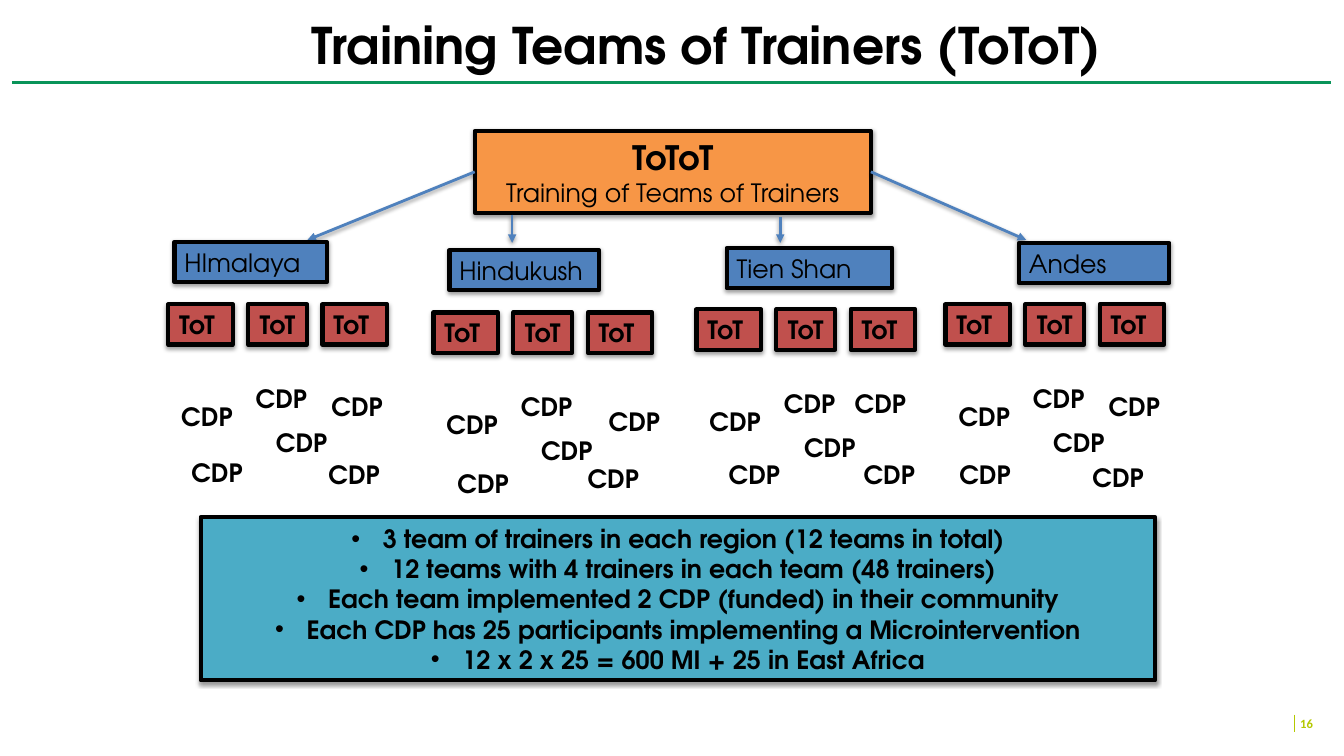
from lxml.etree import SubElement
from pptx import Presentation
from pptx.dml.color import RGBColor
from pptx.enum.shapes import MSO_CONNECTOR as CONN, MSO_SHAPE as SHAPE
from pptx.enum.text import MSO_ANCHOR as ANCHOR, MSO_AUTO_SIZE as FIT, PP_ALIGN as ALIGN
from pptx.oxml.ns import qn
from pptx.util import Pt


def rgb(value):
    return RGBColor.from_string(value)


class Deck:
    """Hold the style and the current slide, and draw its elements."""

    font, size, ink = "TeX Gyre Adventor", 18, "000000"
    orange, blue, red, teal = "F79646", "4F81BD", "C0504D", "4BACC6"
    green, lime = "099459", "B4C800"

    def __init__(self, prs):
        self.s = prs.slides.add_slide(prs.slide_layouts[1])

    def place(self, sp, x, y, w, h):
        sp.left, sp.top, sp.width, sp.height = Pt(x), Pt(y), Pt(w), Pt(h)

    def add_text(self, sp, lines, align=ALIGN.LEFT, anchor=ANCHOR.MIDDLE, font=None, color=None):
        tf = sp.text_frame
        tf.word_wrap, tf.auto_size, tf.vertical_anchor = True, FIT.NONE, anchor
        for i, (text, size, bold) in enumerate(lines):
            p = tf.add_paragraph() if i else tf.paragraphs[0]
            p.alignment, p.space_before = align, Pt(0)
            r = p.add_run()
            r.text = text
            r.font.name, r.font.size, r.font.bold = font or self.font, Pt(size), bold
            r.font.color.rgb = rgb(color or self.ink)
        return tf

    def shade(self, effects):
        shadow = SubElement(effects, qn("a:outerShdw"), blurRad=str(Pt(3.1)),
                            dist=str(Pt(1.6)), dir="5400000", rotWithShape="0")
        color = SubElement(shadow, qn("a:srgbClr"), val=self.ink)
        SubElement(color, qn("a:alpha"), val="38000")

    def frame(self, sp, fill):
        sp.fill.solid()
        sp.fill.fore_color.rgb = rgb(fill)
        sp.line.color.rgb, sp.line.width = rgb(self.ink), Pt(3)
        sp.shadow.inherit = False
        self.shade(sp._element.spPr.find(qn("a:effectLst")))

    def title(self, text, *box):
        sp = self.s.shapes.title
        self.place(sp, *box)
        self.add_text(sp, [(text, 36, True)], ALIGN.CENTER, ANCHOR.TOP)

    def bullets(self, items, fill, *box):
        sp = self.s.placeholders[1]
        self.place(sp, *box)
        self.frame(sp, fill)
        tf = self.add_text(sp, [(item, self.size, True) for item in items], ALIGN.CENTER)
        for p in tf.paragraphs:
            pPr = p._p.get_or_add_pPr()
            pPr.set("marL", str(Pt(22.5)))
            pPr.set("indent", str(Pt(-22.5)))
            SubElement(pPr, qn("a:buFont"), typeface="Arial")
            SubElement(pPr, qn("a:buChar"), char="•")

    def box(self, lines, fill, x, y, w, h=28.8, align=ALIGN.CENTER):
        sp = self.s.shapes.add_shape(SHAPE.RECTANGLE, Pt(x), Pt(y), Pt(w), Pt(h))
        self.frame(sp, fill)
        self.add_text(sp, lines, align)
        return sp

    def label(self, text, x, y, w=54.7, h=28.8, size=18, **style):
        sp = self.s.shapes.add_textbox(Pt(x), Pt(y), Pt(w), Pt(h))
        self.add_text(sp, [(text, size, True)], anchor=ANCHOR.TOP, **style)

    def line(self, x1, y1, x2, y2, color, width, arrow=False):
        cx = self.s.shapes.add_connector(CONN.STRAIGHT, Pt(x1), Pt(y1), Pt(x2), Pt(y2))
        cx.line.color.rgb, cx.line.width = rgb(color), Pt(width)
        effects = SubElement(cx._element.spPr, qn("a:effectLst"))
        if arrow:
            ln = cx._element.spPr.find(qn("a:ln"))
            SubElement(ln, qn("a:tailEnd"), type="triangle")
            self.shade(effects)
        return cx


REGIONS = [
    ("HImalaya", (124.6, 172.8, 108.7), (120.2, 217.4),
     [(229.7, 275.8), (129.6, 323.3), (227.5, 324.7)]),
    ("Hindukush", (321.1, 178.6, 106.6), (309.6, 223.2),
     [(427.7, 286.6), (319.7, 331.2), (412.6, 327.6)]),
    ("Tien Shan", (519.1, 177.1, 118.1), (497.5, 221),
     [(603.4, 273.6), (513.4, 324.7), (609.8, 324.7)]),
    ("Andes", (727.9, 173.5, 107.3), (675.4, 217.4),
     [(784.8, 275.8), (678.2, 324.7), (773.3, 326.9)]),
]
TEAMS = [(0, 46), (57, 42), (110.2, 46)]
SHARED_CDPS = [(2.2, 65.5), (69.8, 84.2), (55.4, 52.6)]
FACTS = [
    "3 team of trainers in each region (12 teams in total)",
    "12 teams with 4 trainers in each team (48 trainers)",
    "Each team implemented 2 CDP (funded) in their community",
    "Each CDP has 25 participants implementing a Microintervention",
    "12 x 2 x 25 = 600 MI + 25 in East Africa",
]


def main():
    prs = Presentation()
    prs.slide_width, prs.slide_height = Pt(960), Pt(540)
    d = Deck(prs)
    d.label("16", 921.6, 507.6, 51.8, 28.8, 9, font="Calibri", color=d.lime)
    d.line(924.5, 510.5, 924.5, 522.7, d.lime, 1)
    d.line(8.6, 59, 951.1, 59, d.green, 2.25)
    d.title("Training Teams of Trainers (ToToT)", 177.1, 6.5, 654.5, 79.9)
    d.bullets(FACTS, d.teal, 143.3, 369.4, 681.8, 116.6)
    root = d.box([("ToToT", 24, True), ("Training of Teams of Trainers", 18, False)],
                 d.orange, 339.1, 93.6, 283, 58.3)

    for side, start, end in [(1, (339.1, 122.75), (219.6, 171.4)),
                             (None, (365.8, 153.4), (365.8, 173.5)),
                             (None, (557.3, 154.8), (557.3, 173.5)),
                             (3, (622.1, 122.75), (733, 171.4))]:
        cx = d.line(*start, *end, d.blue, 2, arrow=True)
        if side is not None:
            cx.begin_connect(root, side)

    for name, spot, (x, y), own_cdps in REGIONS:
        d.box([(name, d.size, False)], d.blue, *spot, align=ALIGN.LEFT)
        for dx, w in TEAMS:
            d.box([("ToT ", d.size, True)], d.red, x + dx, y, w)
        for cdp in [(x + dx, y + dy) for dx, dy in SHARED_CDPS] + own_cdps:
            d.label("CDP", *cdp)

    prs.save("out.pptx")


if __name__ == "__main__":
    main()
